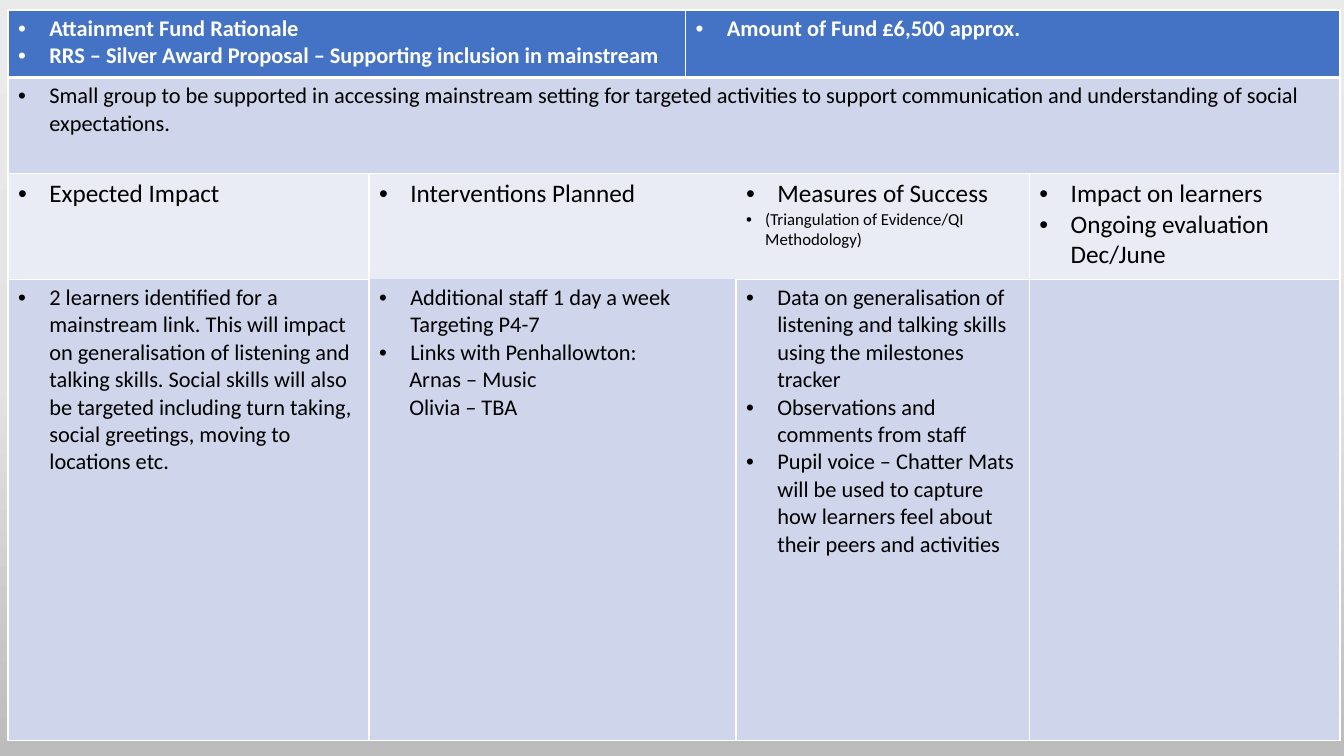
from copy import deepcopy
from lxml import etree
from pptx import Presentation
from pptx.dml.color import RGBColor
from pptx.oxml.ns import qn
from pptx.util import Inches, Pt

# Content: each row lists (column span, paragraphs); a paragraph is (text, format)
HEAD = dict(size=16, color="FFFFFF", bold=True)
BODY = dict(size=16)
LABEL = dict(size=18)
NOTE = dict(size=12, indent=0.19)
NAME = dict(size=16, indent=0.3, bullet=False)

ROWS = [
    [(2, [("Attainment Fund Rationale", HEAD),
          ("RRS – Silver Award Proposal – Supporting inclusion in mainstream", HEAD)]),
     (3, [("Amount of Fund £6,500 approx.", HEAD)])],
    [(5, [("Small group to be supported in accessing mainstream setting for targeted "
           "activities to support communication and understanding of social "
           "expectations.", BODY)])],
    [(1, [("Expected Impact", LABEL)]),
     (2, [("Interventions Planned", LABEL)]),
     (1, [("Measures of Success", LABEL),
          ("(Triangulation of Evidence/QI Methodology)", NOTE)]),
     (1, [("Impact on learners", LABEL),
          ("Ongoing evaluation Dec/June", LABEL)])],
    [(1, [("2 learners identified for a mainstream link. This will impact on "
           "generalisation of listening and talking skills. Social skills will also be "
           "targeted including turn taking, social greetings, moving to locations etc.",
           BODY)]),
     (2, [("Additional staff 1 day a week Targeting P4-7", BODY),
          ("Links with Penhallowton:", BODY),
          ("Arnas – Music", NAME),
          ("Olivia – TBA", NAME)]),
     (1, [("Data on generalisation of listening and talking skills using the milestones "
           "tracker", BODY),
          ("Observations and comments from staff", BODY),
          ("Pupil voice – Chatter Mats will be used to capture how learners feel about "
           "their peers and activities", BODY)]),
     (1, [])],
]
COL_WIDTHS = [3.58, 3.14, 0.5, 2.91, 3.08]
ROW_HEIGHTS = [0.67, 0.95, 1.05, 4.58]
ROW_FILLS = ["4472C4", "CFD5EA", "E9EBF5", "CFD5EA"]
BACKGROUND = [(0, "EBEAEA"), (0.5, "E4E3E3"), (1, "BDBCBC")]
# Border widths that differ from 1 pt, by (row, first column)
BORDERS = {(2, 1): dict(R=0, B=0), (2, 3): dict(L=0), (3, 1): dict(T=0)}


def rgb(value):
    return RGBColor.from_string(value)


def add_text(p, text, size=16, color="000000", bold=False, indent=0.31, bullet=True):
    r = p.add_run()
    r.text = text
    r.font.name, r.font.size, r.font.bold = "Calibri", Pt(size), bold
    r.font.color.rgb = rgb(color)
    pPr = p._p.get_or_add_pPr()
    pPr.set("marL", str(Inches(indent)))
    pPr.set("indent", str(-Inches(indent) if bullet else 0))
    if bullet:
        etree.SubElement(pPr, qn("a:buFont")).set("typeface", "Arial")
        etree.SubElement(pPr, qn("a:buChar")).set("char", "•")
    else:
        etree.SubElement(pPr, qn("a:buNone"))


def set_borders(cell, widths):
    tcPr = cell._tc.get_or_add_tcPr()
    for side in "LRTB":
        width = widths.get(side, 1)
        ln = etree.SubElement(tcPr, qn("a:ln" + side), w=str(Pt(width)))
        if width:
            fill = etree.SubElement(ln, qn("a:solidFill"))
            etree.SubElement(fill, qn("a:srgbClr"), val="FFFFFF")
        else:
            etree.SubElement(ln, qn("a:noFill"))


prs = Presentation()
prs.slide_width, prs.slide_height = Inches(13.33), Inches(7.5)
s = prs.slides.add_slide(prs.slide_layouts[6])

# Background gradient, top to bottom
bg = s.background.fill
bg.gradient()
bg.gradient_angle = 270
stops = s.element.find(".//" + qn("a:gsLst"))
stops.append(deepcopy(stops[-1]))
for stop, (position, color) in zip(bg.gradient_stops, BACKGROUND):
    stop.position, stop.color.rgb = position, rgb(color)

# Table grid
table = s.shapes.add_table(len(ROW_HEIGHTS), len(COL_WIDTHS), Inches(0.08), Inches(0.1),
                           Inches(sum(COL_WIDTHS)), Inches(sum(ROW_HEIGHTS))).table
for column, width in zip(table.columns, COL_WIDTHS):
    column.width = Inches(width)
for row, height in zip(table.rows, ROW_HEIGHTS):
    row.height = Inches(height)

# Cells: merge, border, fill, then text
for i, cells in enumerate(ROWS):
    j = 0
    for span, paragraphs in cells:
        cell = table.cell(i, j)
        if span > 1:
            cell.merge(table.cell(i, j + span - 1))
        widths = {0: dict(B=3), 1: dict(T=3)}.get(i, {}) | BORDERS.get((i, j), {})
        for k in range(j, j + span):
            part = table.cell(i, k)
            set_borders(part, widths)
            part.fill.solid()
            part.fill.fore_color.rgb = rgb(ROW_FILLS[i])
        tf = cell.text_frame
        for n, (text, style) in enumerate(paragraphs):
            add_text(tf.add_paragraph() if n else tf.paragraphs[0], text, **style)
        j += span

prs.save("out.pptx")
